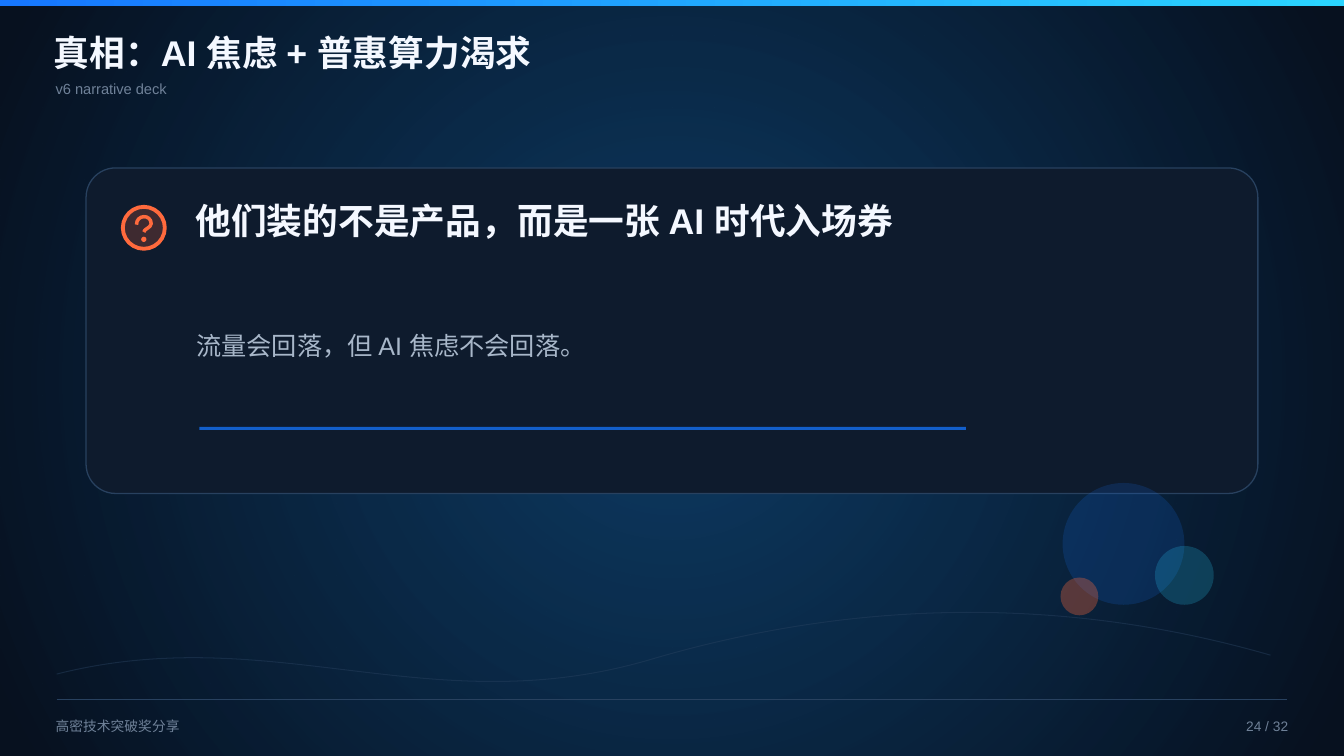
from dataclasses import dataclass

from lxml.etree import SubElement
from pptx import Presentation
from pptx.dml.color import RGBColor
from pptx.enum.shapes import MSO_CONNECTOR, MSO_SHAPE
from pptx.enum.text import MSO_ANCHOR, MSO_AUTO_SIZE, PP_ALIGN
from pptx.oxml.ns import qn
from pptx.util import Pt

PX = 9525
WIDTH, HEIGHT = 1280, 720


@dataclass(frozen=True)
class Theme:
    font: str = "Arial"
    night: str = "07111F"
    panel: str = "0E1B2D"
    edge: str = "28415F"
    blue: str = "1677FF"
    cyan: str = "2AD4FF"
    orange: str = "FF6A3D"
    bright: str = "F4F8FF"
    soft: str = "A8B7C9"
    muted: str = "6F8198"
    heading: float = 25.5
    body: float = 18
    caption: float = 10.5
    footer: float = 9.8


THEME = Theme()


def emu(*lengths):
    return [round(length * PX) for length in lengths]


def set_alpha(shape, route, percent):
    """Set the opacity of the colour found under the given route of spPr."""
    if percent < 100:
        color = shape._element.spPr.find(f"{route}/{qn('a:srgbClr')}")
        SubElement(color, qn("a:alpha")).set("val", str(percent * 1000))


def set_line(shape, color, width, alpha=100):
    shape.line.color.rgb = RGBColor.from_string(color)
    shape.line.width = Pt(width)
    set_alpha(shape, f"{qn('a:ln')}/{qn('a:solidFill')}", alpha)


def add_block(page, box, fill, alpha=100, kind=MSO_SHAPE.RECTANGLE):
    shape = page.shapes.add_shape(kind, *emu(*box))
    shape.shadow.inherit = False
    shape.fill.solid()
    shape.fill.fore_color.rgb = RGBColor.from_string(fill)
    set_alpha(shape, qn("a:solidFill"), alpha)
    shape.line.fill.background()
    return shape


def add_circle(page, center_x, center_y, diameter, fill, alpha=100):
    box = (center_x - diameter / 2, center_y - diameter / 2, diameter, diameter)
    return add_block(page, box, fill, alpha, MSO_SHAPE.OVAL)


def add_gradient(page, box, stops, radial=False):
    """Add a rectangle whose gradient runs through (color, opacity) stops."""
    shape = add_block(page, box, THEME.night)
    solid = shape._element.spPr.find(qn("a:solidFill"))
    gradient = solid.makeelement(qn("a:gradFill"), {"rotWithShape": "1"})
    stop_list = SubElement(gradient, qn("a:gsLst"))
    for position, (color, alpha) in zip(("0", "100000"), stops):
        stop = SubElement(stop_list, qn("a:gs"), {"pos": position})
        tint = SubElement(stop, qn("a:srgbClr"), {"val": color})
        if alpha < 100:
            SubElement(tint, qn("a:alpha"), {"val": str(alpha * 1000)})
    if radial:
        route = SubElement(gradient, qn("a:path"), {"path": "circle"})
        SubElement(route, qn("a:fillToRect"), dict.fromkeys("ltrb", "50000"))
    else:
        SubElement(gradient, qn("a:lin"), {"ang": "0", "scaled": "0"})
    solid.getparent().replace(solid, gradient)


def add_curve(page, points, color, width, alpha=100):
    """Draw an open Bézier line: a start, then three points for each arc."""
    start, *rest = [emu(*point) for point in points]
    builder = page.shapes.build_freeform(*start, scale=1.0)
    builder.add_line_segments(rest, close=False)
    curve = builder.convert_to_shape()
    curve.shadow.inherit = False
    curve.fill.background()
    set_line(curve, color, width, alpha)
    segments = list(curve._element.iter(qn("a:lnTo")))
    for first in range(0, len(segments), 3):
        arc = segments[first].makeelement(qn("a:cubicBezTo"), {})
        segments[first].addprevious(arc)
        for segment in segments[first:first + 3]:
            arc.append(segment[0])
            segment.getparent().remove(segment)


def add_rule(page, left, top, width, color, weight, alpha=100):
    rule = page.shapes.add_connector(
        MSO_CONNECTOR.STRAIGHT, *emu(left, top, left + width, top))
    set_line(rule, color, weight, alpha)
    SubElement(rule._element.spPr, qn("a:effectLst"))


def add_text(page, box, text, size, color, bold=False, align=PP_ALIGN.LEFT):
    frame = page.shapes.add_textbox(*emu(*box)).text_frame
    frame.margin_left = frame.margin_right = 0
    frame.margin_top = frame.margin_bottom = 0
    frame.word_wrap = False
    frame.auto_size = MSO_AUTO_SIZE.SHAPE_TO_FIT_TEXT
    frame.vertical_anchor = MSO_ANCHOR.TOP
    para = frame.paragraphs[0]
    para.alignment = align
    span = para.add_run()
    span.text = text
    span.font.name = THEME.font
    span.font.size = Pt(size)
    span.font.bold = bold
    span.font.color.rgb = RGBColor.from_string(color)


def draw_backdrop(page, box):
    left, top, _, height = box
    add_block(page, box, THEME.night)
    for glow, alpha in ((THEME.blue, 22), (THEME.cyan, 12)):
        add_gradient(page, box, ((glow, alpha), (glow, 0)), radial=True)
    bottom = top + height
    wave = ((54, 78), (260, 130), (410, 30), (620, 92),
            (830, 154), (1030, 148), (1210, 96))
    add_curve(page, [(left + x, bottom - rise) for x, rise in wave],
              THEME.edge, 0.75, 45)


def draw_header(page, box):
    left, top, width, _ = box
    add_gradient(page, (left, top, width, 6),
                 ((THEME.blue, 100), (THEME.cyan, 100)))
    add_text(page, (left + 51, top + 29, 505, 55), "真相：AI 焦虑 + 普惠算力渴求",
             THEME.heading, THEME.bright, bold=True)
    add_text(page, (left + 53, top + 76, 130, 22), "v6 narrative deck",
             THEME.caption, THEME.muted)


def draw_question_icon(page, center_x, center_y):
    ring = add_circle(page, center_x, center_y, 40, THEME.orange, 20)
    set_line(ring, THEME.orange, 2.75)
    hook = ((-7, -3), (-7, -13), (7, -13), (7, -4),
            (7, 0), (0, 1), (0, 4))
    add_curve(page, [(center_x + x, center_y + y) for x, y in hook],
              THEME.orange, 2.5)
    add_circle(page, center_x, center_y + 11, 5, THEME.orange)


def draw_card(page, box):
    left, top, _, height = box
    card = add_block(page, box, THEME.panel, kind=MSO_SHAPE.ROUNDED_RECTANGLE)
    card.adjustments[0] = 28 / height
    set_line(card, THEME.edge, 0.9)
    draw_question_icon(page, left + 55, top + 57)
    add_text(page, (left + 104, top + 29, 736, 55),
             "他们装的不是产品，而是一张 AI 时代入场券",
             THEME.heading, THEME.bright, bold=True)
    add_text(page, (left + 105, top + 155, 395, 38),
             "流量会回落，但 AI 焦虑不会回落。", THEME.body, THEME.soft)
    add_rule(page, left + 108, top + 248, 730, THEME.blue, 2.25, 75)


def draw_bubbles(page, box):
    left, top, _, _ = box
    for x, y, diameter, color, alpha in (
            (60, 58, 116, THEME.blue, 16),
            (118, 88, 56, THEME.cyan, 20),
            (18, 108, 36, THEME.orange, 32)):
        add_circle(page, left + x, top + y, diameter, color, alpha)


def draw_footer(page, box):
    left, top, width, _ = box
    add_rule(page, left, top, width, THEME.edge, 0.75)
    add_text(page, (left - 1, top + 18, 126, 21), "高密技术突破奖分享",
             THEME.footer, THEME.muted)
    add_text(page, (left + width - 47, top + 18, 48, 21), "24 / 32",
             THEME.footer, THEME.muted, align=PP_ALIGN.RIGHT)


def main():
    deck = Presentation()
    deck.slide_width, deck.slide_height = emu(WIDTH, HEIGHT)
    page = deck.slides.add_slide(deck.slide_layouts[6])
    draw_backdrop(page, (0, 0, WIDTH, HEIGHT))
    draw_header(page, (0, 0, WIDTH, 110))
    draw_card(page, (82, 160, 1116, 310))
    draw_bubbles(page, (1010, 460, 146, 126))
    draw_footer(page, (54, 666, 1172, 54))
    deck.save("out.pptx")


if __name__ == "__main__":
    main()
